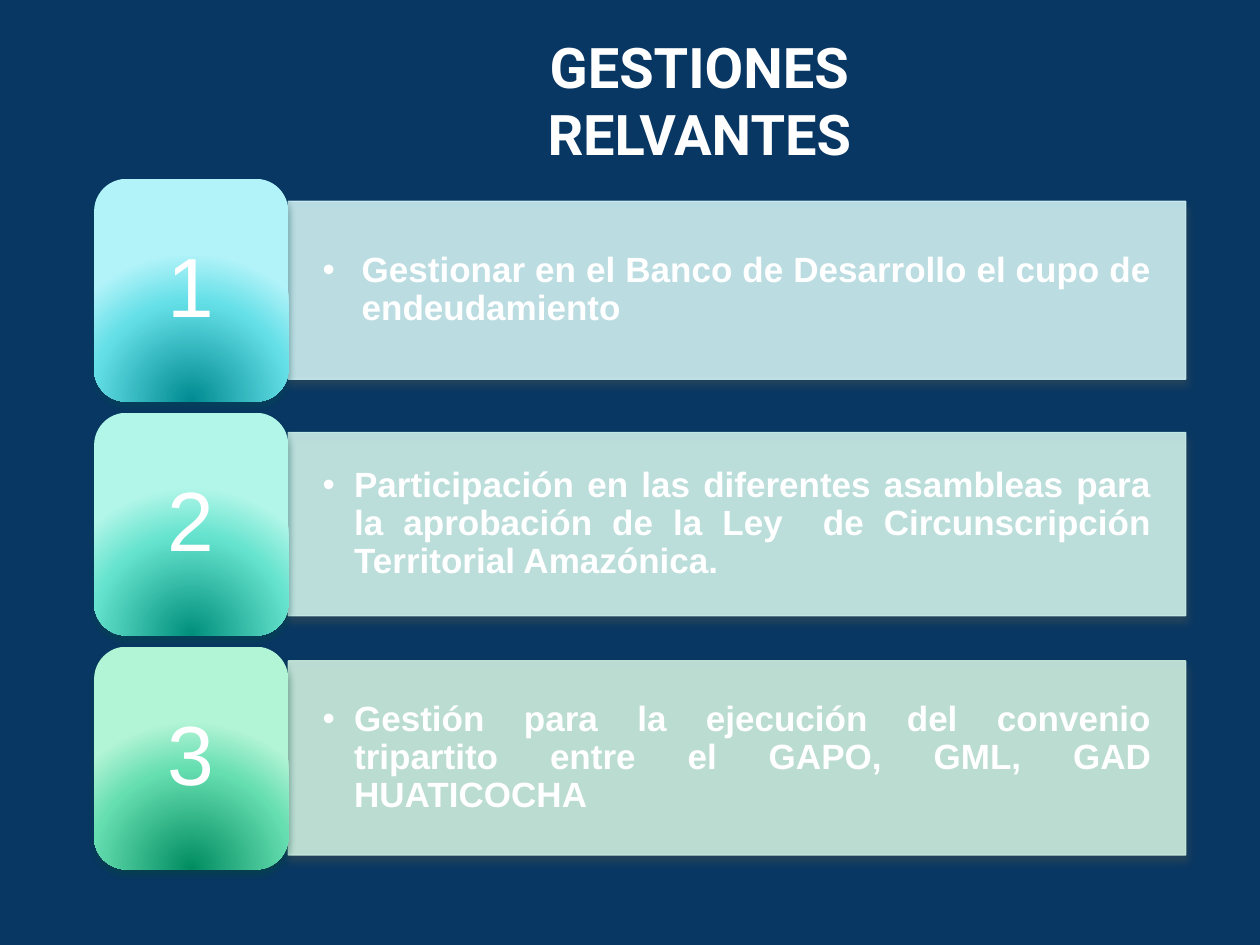
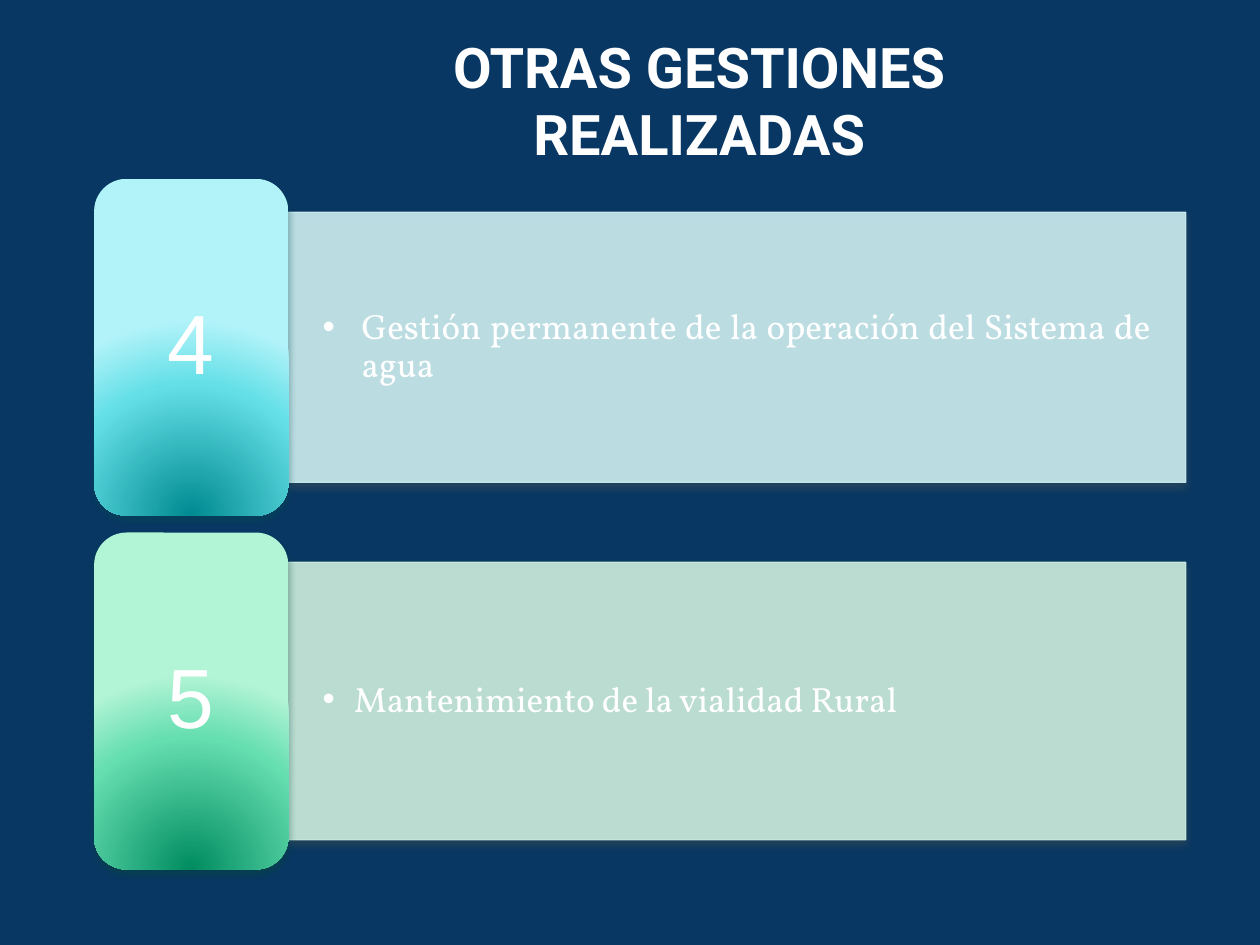
from lxml.etree import SubElement
from pptx import Presentation
from pptx.dml.color import RGBColor
from pptx.enum.shapes import MSO_SHAPE
from pptx.enum.text import MSO_ANCHOR, PP_ALIGN
from pptx.oxml import parse_xml
from pptx.oxml.ns import nsdecls, qn
from pptx.util import Pt

NAVY = RGBColor(0x08, 0x37, 0x63)
WHITE = RGBColor(0xFF, 0xFF, 0xFF)

CYAN = {
    "bar": RGBColor(0xCC, 0xEE, 0xF1),
    "shade": RGBColor(0x47, 0x54, 0x55),
    "stops": (RGBColor(0x00, 0x8A, 0x91), RGBColor(0x64, 0xDF, 0xE7), RGBColor(0xB1, 0xF3, 0xF9)),
    "dark": RGBColor(0x02, 0x4B, 0x4E),
}
TEAL = {
    "bar": RGBColor(0xCC, 0xEF, 0xE9),
    "shade": RGBColor(0x47, 0x54, 0x52),
    "stops": (RGBColor(0x00, 0x8F, 0x7C), RGBColor(0x65, 0xE3, 0xCE), RGBColor(0xB1, 0xF6, 0xE8)),
    "dark": RGBColor(0x03, 0x4C, 0x44),
}
GREEN = {
    "bar": RGBColor(0xCC, 0xED, 0xDE),
    "shade": RGBColor(0x47, 0x54, 0x4E),
    "stops": (RGBColor(0x00, 0x8C, 0x60), RGBColor(0x65, 0xDE, 0xB0), RGBColor(0xB2, 0xF4, 0xD6)),
    "dark": RGBColor(0x04, 0x4A, 0x37),
}

TITLE = {"name": "Roboto", "size": Pt(32), "bold": True}
DIGIT = {"name": "Arial", "size": Pt(48), "bold": False}
STRONG = {"name": "Arial", "size": Pt(20), "bold": True}
SERIF = {"name": "Vollkorn", "size": Pt(20), "bold": False}

HEAD = (218.2, 15.1, 363, 85)
LIST = (53.8, 102.2, 623.8, 394.6)
TILE_WIDTH = 111
GAP = 0.05

PAGES = [
    ("GESTIONES RELVANTES", STRONG, [
        ("1", "Gestionar en el Banco de Desarrollo el cupo de endeudamiento",
         CYAN, 101.8, 22.3),
        ("2", "Participación en las diferentes asambleas para la aprobación de la Ley  "
         "de Circunscripción Territorial Amazónica.", TEAL, 104.7, 18),
        ("3", "Gestión para la ejecución del convenio tripartito entre el GAPO, GML, GAD HUATICOCHA",
         GREEN, 111, 18),
    ]),
    ("OTRAS GESTIONES REALIZADAS", SERIF, [
        ("4", "Gestión permanente de la operación del Sistema de agua", CYAN, 154.4, 22.3),
        ("5", "Mantenimiento de la vialidad Rural", GREEN, 158.6, 18),
    ]),
]


def apply(target, values):
    for name, value in values.items():
        setattr(target, name, value)


def write(shape, text, font, align, inset=None, lead=None):
    frame = shape.text_frame
    apply(frame, {"word_wrap": True})
    if inset:
        side, edge = map(Pt, inset)
        apply(frame, {"vertical_anchor": MSO_ANCHOR.MIDDLE,
                      "margin_left": side, "margin_right": side,
                      "margin_top": edge, "margin_bottom": edge})
    para = frame.paragraphs[0]
    apply(para, {"alignment": align, "line_spacing": lead})
    run = para.add_run()
    run.text = text
    apply(run.font, font)
    run.font.color.rgb = WHITE
    return para


def bullet(para, indent):
    para.level = 1
    props = para._p.get_or_add_pPr()
    props.set("marL", str(Pt(indent)))
    props.set("indent", str(-Pt(indent)))
    SubElement(props, qn("a:buFont")).set("typeface", "Arial")
    SubElement(props, qn("a:buChar")).set("char", "•")


def shadow(shape, color):
    shape.shadow.inherit = False
    effects = shape._element.spPr.find(qn("a:effectLst"))
    effects.append(parse_xml(
        f'<a:outerShdw {nsdecls("a")} blurRad="{Pt(4.5)}" dist="{Pt(3)}" dir="5400000" '
        f'rotWithShape="0"><a:srgbClr val="{color}"><a:alpha val="48000"/>'
        '</a:srgbClr></a:outerShdw>'))


def radial(shape, colors):
    stops = "".join(
        f'<a:gs pos="{spot * 1000}"><a:srgbClr val="{color}"/></a:gs>'
        for spot, color in zip((0, 68, 100), colors))
    shape._element.spPr.find(qn("a:prstGeom")).addnext(parse_xml(
        f'<a:gradFill {nsdecls("a")} rotWithShape="1"><a:gsLst>{stops}</a:gsLst>'
        '<a:path path="circle"><a:fillToRect l="50000" t="130000" r="50000" b="-30000"/>'
        '</a:path></a:gradFill>'))


def heading(slide, box, text):
    label = slide.shapes.add_textbox(*map(Pt, box))
    write(label, text, TITLE, PP_ALIGN.CENTER)


def bar(slide, box, text, font, theme, indent):
    panel = slide.shapes.add_shape(MSO_SHAPE.RECTANGLE, *map(Pt, box))
    panel.fill.solid()
    panel.line.width = Pt(0.75)
    for paint in (panel.fill.fore_color, panel.line.color):
        paint.rgb = theme["bar"]
    for color in panel._element.spPr.iter(qn("a:srgbClr")):
        SubElement(color, qn("a:alpha")).set("val", "90000")
    shadow(panel, theme["shade"])
    bullet(write(panel, text, font, PP_ALIGN.JUSTIFY, (19.6, 9.8), 0.9), indent)


def tile(slide, box, digit, theme):
    badge = slide.shapes.add_shape(MSO_SHAPE.ROUNDED_RECTANGLE, *map(Pt, box))
    radial(badge, theme["stops"])
    badge.line.fill.background()
    shadow(badge, theme["dark"])
    write(badge, digit, DIGIT, PP_ALIGN.CENTER, (14.4, 7.2), 0.9)


def rows(slide, box, items, font):
    left, top, width, height = box
    count = len(items)
    tall = height / (count + GAP * (count - 1))
    for index, (digit, text, theme, depth, indent) in enumerate(items):
        y = top + index * tall * (1 + GAP)
        bar(slide, (left + TILE_WIDTH, y + (tall - depth) / 2, width - TILE_WIDTH, depth),
            text, font, theme, indent)
        tile(slide, (left, y, TILE_WIDTH, tall), digit, theme)


def main():
    deck = Presentation()
    apply(deck, {"slide_width": Pt(720), "slide_height": Pt(540)})
    for title, font, items in PAGES:
        slide = deck.slides.add_slide(deck.slide_layouts[6])
        slide.background.fill.solid()
        slide.background.fill.fore_color.rgb = NAVY
        heading(slide, HEAD, title)
        rows(slide, LIST, items, font)
    deck.save("out.pptx")


if __name__ == "__main__":
    main()
